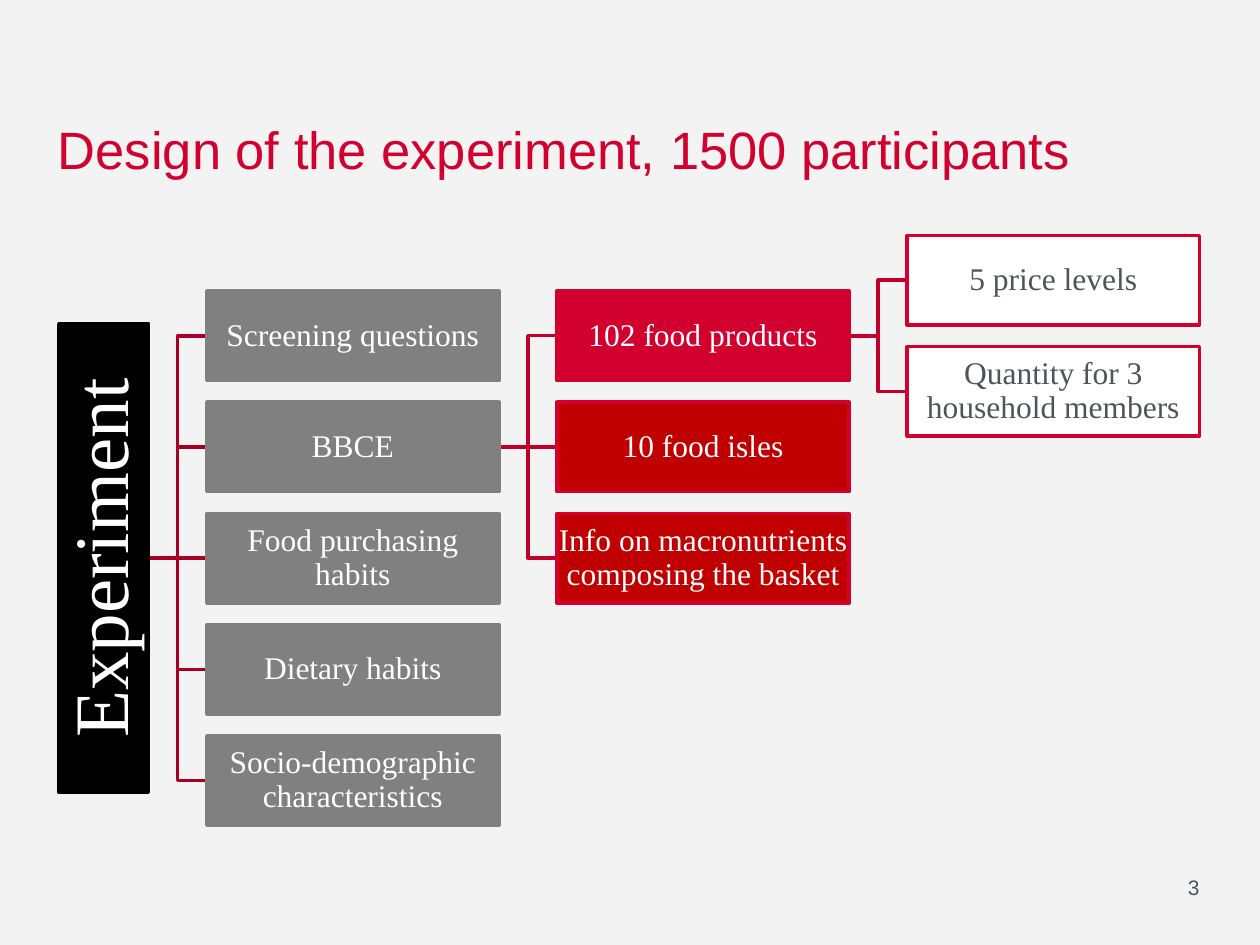
from dataclasses import dataclass

from lxml.etree import SubElement
from pptx import Presentation
from pptx.dml.color import RGBColor
from pptx.enum.shapes import MSO_CONNECTOR as Connector, MSO_SHAPE as Shape
from pptx.enum.text import MSO_ANCHOR as Anchor, PP_ALIGN as Align
from pptx.oxml.ns import qn
from pptx.util import Inches, Pt


@dataclass(frozen=True)
class Theme:
    background: str = "F3F3F3"
    red: str = "D2002E"
    deep_red: str = "C00000"
    root_line: str = "A80025"
    branch_line: str = "BF002A"
    black: str = "000000"
    grey: str = "808080"
    white: str = "FFFFFF"
    text: str = "50535A"
    sans: str = "Arial"
    serif: str = "Times New Roman"
    title_size: int = 30
    root_size: int = 44
    box_size: int = 18
    number_size: int = 12
    line_width: int = 2


@dataclass(frozen=True)
class Box:
    """A box of the tree; row may be fractional."""
    text: str
    col: int
    row: float
    fill: str
    line: str
    color: str = Theme.white

    @property
    def left(self) -> float:
        return COL_LEFT + self.col * COL_STEP

    @property
    def top(self) -> float:
        return ROW_TOP + self.row * ROW_STEP

    @property
    def middle(self) -> float:
        return self.top + BOX_H / 2


T = Theme()
BOX_W, BOX_H = 2.32, 0.71
COL_LEFT, COL_STEP = 1.64, 2.78
ROW_TOP, ROW_STEP = 2.31, (5.84 - 2.31) / 4
GAP = COL_STEP - BOX_W
ROOT_LENGTH, ROOT_RIGHT = 3.72, COL_LEFT - GAP

STAGES = [Box(text, 0, row, T.grey, T.grey) for row, text in enumerate((
    "Screening questions", "BBCE", "Food purchasing habits",
    "Dietary habits", "Socio-demographic characteristics"))]
PARTS = [
    Box("102 food products", 1, 0, T.red, T.red),
    Box("10 food isles", 1, 1, T.deep_red, T.red),
    Box("Info on macronutrients composing the basket", 1, 2, T.deep_red, T.red),
]
DETAILS = [
    Box("5 price levels", 2, -0.5, T.white, T.red, T.text),
    Box("Quantity for 3 household members", 2, 0.5, T.white, T.red, T.text),
]


def rgb(color: str) -> RGBColor:
    return RGBColor.from_string(color)


def set_line(s, color: str) -> None:
    s.line.color.rgb = rgb(color)
    s.line.width = Pt(T.line_width)


def write(s, text: str, font: str, size: int, color: str, align, anchor,
          inset: float = 0, spacing: float = 1, wrap: bool = True) -> None:
    tf = s.text_frame
    tf.word_wrap = wrap
    tf.vertical_anchor = anchor
    tf.margin_left = tf.margin_right = Inches(inset)
    tf.margin_top = tf.margin_bottom = Inches(inset)
    p = tf.paragraphs[0]
    p.alignment = align
    p.line_spacing = spacing
    r = p.add_run()
    r.text = text
    r.font.name = font
    r.font.size = Pt(size)
    r.font.color.rgb = rgb(color)


def add_label(slide, left: float, top: float, width: float, height: float,
              text: str, size: int, color: str, align, anchor,
              wrap: bool = True) -> None:
    s = slide.shapes.add_textbox(
        Inches(left), Inches(top), Inches(width), Inches(height))
    write(s, text, T.sans, size, color, align, anchor, wrap=wrap)


def add_rect(slide, left: float, top: float, width: float, fill: str,
             line: str):
    s = slide.shapes.add_shape(
        Shape.RECTANGLE, Inches(left), Inches(top), Inches(width), Inches(BOX_H))
    s.shadow.inherit = False
    s.fill.solid()
    s.fill.fore_color.rgb = rgb(fill)
    set_line(s, line)
    return s


def add_box(slide, box: Box) -> None:
    s = add_rect(slide, box.left, box.top, BOX_W, box.fill, box.line)
    write(s, box.text, T.serif, T.box_size, box.color, Align.CENTER,
          Anchor.MIDDLE, inset=0.01, spacing=0.9)


def add_root(slide, text: str, middle: float) -> None:
    """Draw the tree's root as a bar turned to read upwards."""
    left = ROOT_RIGHT - BOX_H / 2 - ROOT_LENGTH / 2
    s = add_rect(slide, left, middle - BOX_H / 2, ROOT_LENGTH, T.black, T.black)
    s.rotation = 270
    write(s, text, T.serif, T.root_size, T.white, Align.CENTER, Anchor.MIDDLE,
          inset=0.03, spacing=0.9)


def add_branches(slide, middle: float, children: list[Box], color: str) -> None:
    """Join a parent's right edge at height middle to each child."""
    for child in children:
        start, end = Inches(child.left - GAP), Inches(child.left)
        y, child_y = Inches(middle), Inches(child.middle)
        if y == child_y:
            s = slide.shapes.add_connector(Connector.STRAIGHT, start, y, end, y)
            SubElement(s._element.spPr, qn("a:effectLst"))
        else:
            bend = Inches(child.left - GAP / 2)
            path = slide.shapes.build_freeform(start, y)
            path.add_line_segments(
                [(bend, y), (bend, child_y), (end, child_y)], close=False)
            s = path.convert_to_shape()
            s.shadow.inherit = False
            s.fill.background()
        set_line(s, color)


def main() -> None:
    prs = Presentation()
    prs.slide_width, prs.slide_height = Inches(10), Inches(7.5)
    slide = prs.slides.add_slide(prs.slide_layouts[6])
    slide.background.fill.solid()
    slide.background.fill.fore_color.rgb = rgb(T.background)

    add_label(slide, 8.78, 6.94, 0.74, 0.28, "3", T.number_size, T.text,
              Align.RIGHT, Anchor.TOP)
    add_label(slide, 0.46, 0.52, 9.06, 0.91,
              "Design of the experiment, 1500 participants",
              T.title_size, T.red, Align.LEFT, Anchor.BOTTOM, wrap=False)

    root_middle = STAGES[2].middle
    add_branches(slide, root_middle, STAGES, T.root_line)
    add_branches(slide, STAGES[1].middle, PARTS, T.branch_line)
    add_branches(slide, PARTS[0].middle, DETAILS, T.branch_line)
    add_root(slide, "Experiment", root_middle)
    for box in STAGES + PARTS + DETAILS:
        add_box(slide, box)
    prs.save("out.pptx")


if __name__ == "__main__":
    main()
